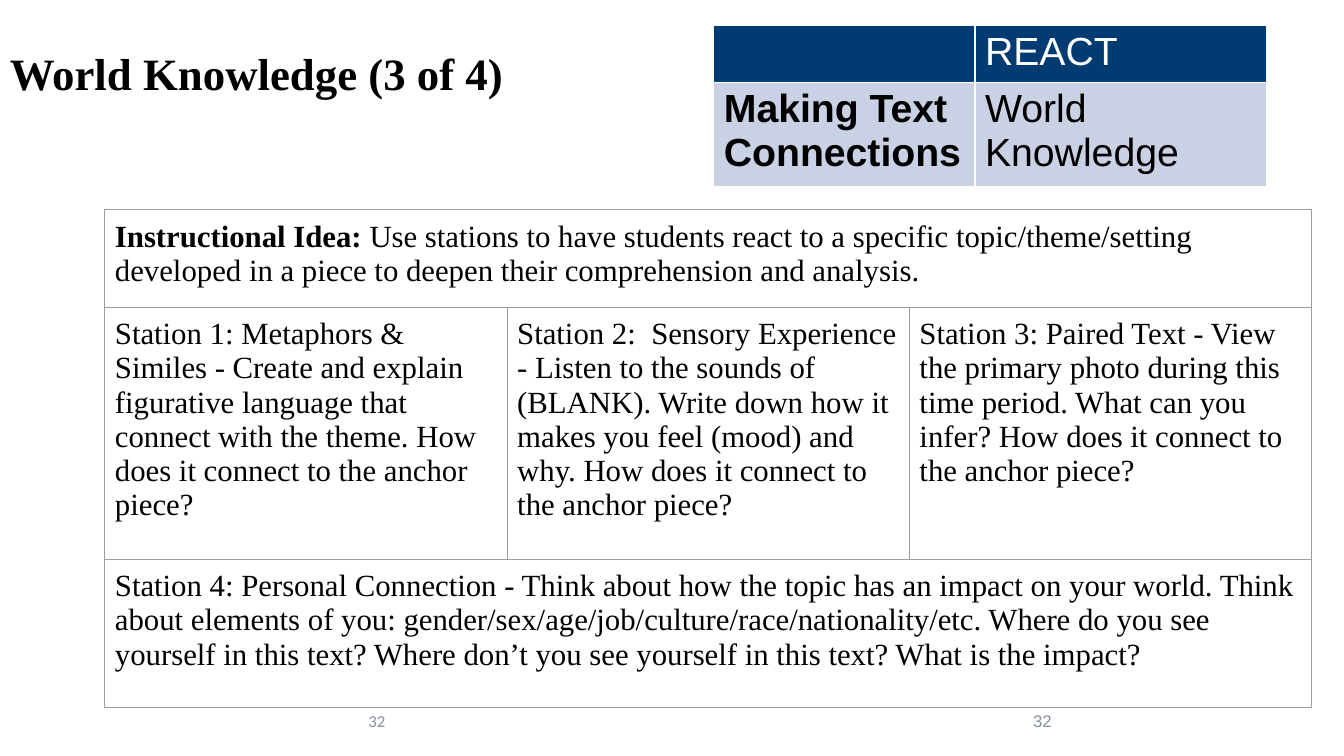
"""Build the World Knowledge slide with its REACT table and stations table."""
import pptx
import pptx.dml.color
import pptx.enum.text
import pptx.oxml
import pptx.oxml.ns
import pptx.util
from pptx.util import Inches

COLORS = {"navy": "003C71", "pale": "CAD1E4", "black": "000000",
          "white": "FFFFFF", "gray": "888FA3", "rule": "9E9E9E"}
ALIGN = pptx.enum.text.PP_ALIGN
SERIF = "Times New Roman"


def add_text(tf, text, size=22, font=SERIF, color="black", bold=False, align=ALIGN.LEFT):
    """Append a formatted run to the first paragraph."""
    tf.word_wrap = True
    p = tf.paragraphs[0]
    p.alignment = align
    r = p.add_run()
    r.text = text
    r.font.size = pptx.util.Pt(size)
    r.font.name = font
    r.font.bold = bold
    r.font.color.rgb = pptx.dml.color.RGBColor.from_string(COLORS[color])


def style_cell(cell, border, width, fill=None, margin=0.05):
    """Set the margins, four borders and fill of a cell."""
    cell.margin_left = cell.margin_right = Inches(0.1)
    cell.margin_top = cell.margin_bottom = Inches(margin)
    if fill:
        cell.fill.solid()
        cell.fill.fore_color.rgb = pptx.dml.color.RGBColor.from_string(COLORS[fill])
    else:
        cell.fill.background()
    tcPr = cell._tc.get_or_add_tcPr()
    for i, side in enumerate(("lnL", "lnR", "lnT", "lnB")):
        tcPr.insert(i, pptx.oxml.parse_xml(
            f'<a:{side} {pptx.oxml.ns.nsdecls("a")} w="{pptx.util.Pt(width)}"><a:solidFill>'
            f'<a:srgbClr val="{COLORS[border]}"/></a:solidFill></a:{side}>'))


prs = pptx.Presentation()
prs.slide_width = Inches(13.33)
prs.slide_height = Inches(7.5)
s = prs.slides.add_slide(prs.slide_layouts[6])

text_boxes = [
    ((9.42, 6.95, 1.11, 0.4), "32",
     dict(size=12, font="Arial", color="gray", align=ALIGN.RIGHT)),
    ((0.92, 6.95, 3, 0.4), "32",
     dict(size=12, font="Calibri", color="gray", align=ALIGN.RIGHT)),
    ((0, 0, 11.5, 1.45), "World Knowledge (3 of 4)", dict(size=32, bold=True)),
]
for box, text, fmt in text_boxes:
    tf = s.shapes.add_textbox(*map(Inches, box)).text_frame
    tf.vertical_anchor = pptx.enum.text.MSO_ANCHOR.MIDDLE
    add_text(tf, text, **fmt)

react_rows = [["", "REACT"], ["Making Text Connections", "World Knowledge"]]
react = s.shapes.add_table(2, 2, Inches(7.08), Inches(0.25), Inches(5.48), Inches(1.49)).table
for col, width in zip(react.columns, (2.59, 2.89)):
    col.width = Inches(width)
for row, height in zip(react.rows, (0.52, 0.97)):
    row.height = Inches(height)
for i, texts in enumerate(react_rows):
    for j, text in enumerate(texts):
        cell = react.cell(i, j)
        style_cell(cell, "white", 1, fill=("navy", "pale")[i])
        if text:
            add_text(cell.text_frame, text, size=28, font="Arial",
                     color=("white", "black")[i], bold=j == 0)

station_rows = [
    ["Use stations to have students react to a specific topic/theme/setting developed in a "
     "piece to deepen their comprehension and analysis."],
    ["Station 1: Metaphors & Similes - Create and explain figurative language that connect "
     "with the theme. How does it connect to the anchor piece?",
     "Station 2:  Sensory Experience - Listen to the sounds of (BLANK). Write down how it "
     "makes you feel (mood) and why. How does it connect to the anchor piece?",
     "Station 3: Paired Text - View the primary photo during this time period. What can you "
     "infer? How does it connect to the anchor piece?"],
    ["Station 4: Personal Connection - Think about how the topic has an impact on your world. "
     "Think about elements of you: gender/sex/age/job/culture/race/nationality/etc. Where do "
     "you see yourself in this text? Where don’t you see yourself in this text? What is the "
     "impact?"],
]
stations = s.shapes.add_table(3, 3, Inches(1.04), Inches(2.08), Inches(11.97), Inches(4.94)).table
stations.first_row = stations.horz_banding = False
for col in stations.columns:
    col.width = Inches(3.99)
for row, height in zip(stations.rows, (0.97, 2.5, 1.47)):
    row.height = Inches(height)
for cell in stations.iter_cells():
    style_cell(cell, "rule", 0.75, margin=0.1)
for i, texts in enumerate(station_rows):
    if len(texts) == 1:
        stations.cell(i, 0).merge(stations.cell(i, 2))
    for j, text in enumerate(texts):
        tf = stations.cell(i, j).text_frame
        if i == 0:
            add_text(tf, "Instructional Idea: ", bold=True)
        add_text(tf, text)

prs.save("out.pptx")
